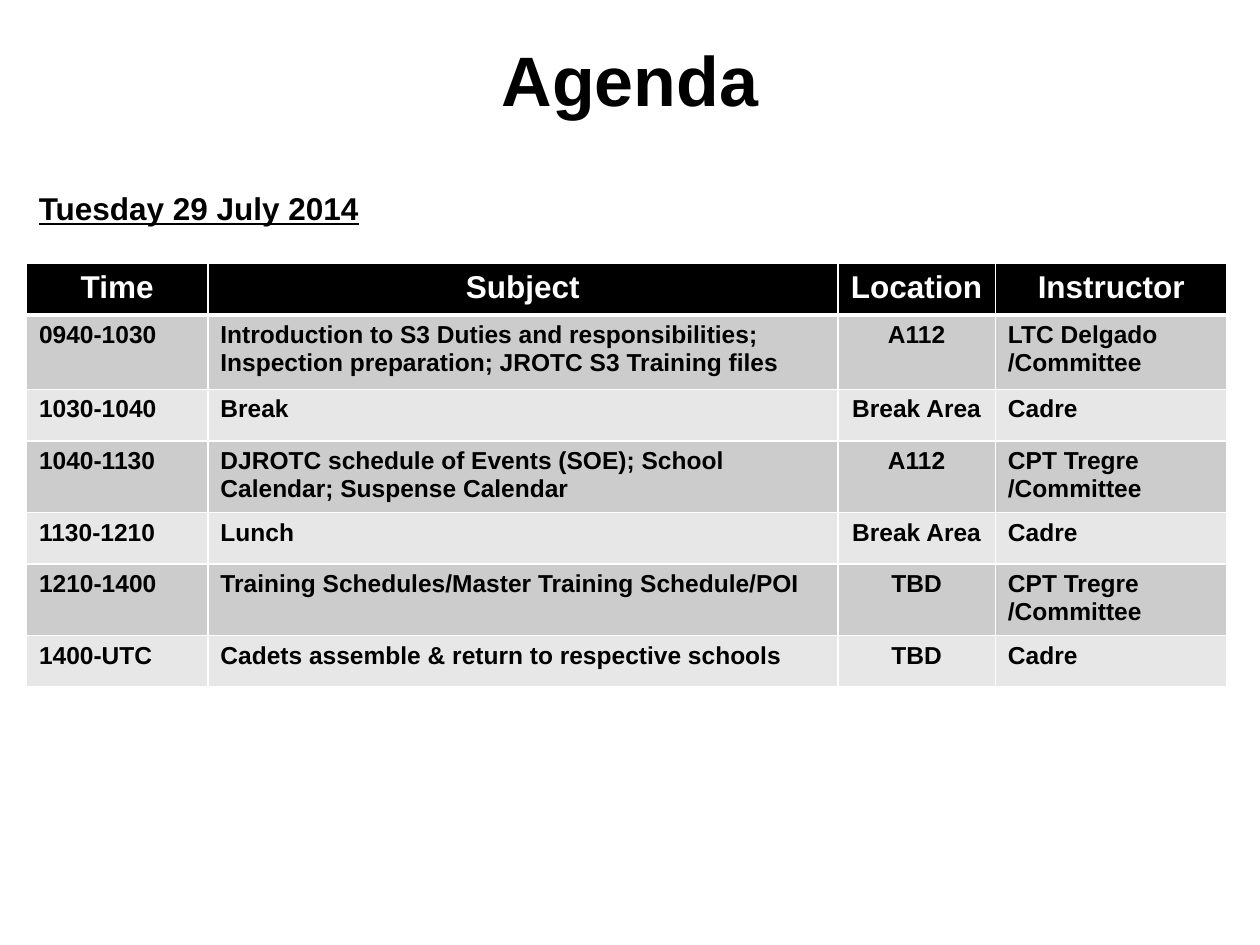
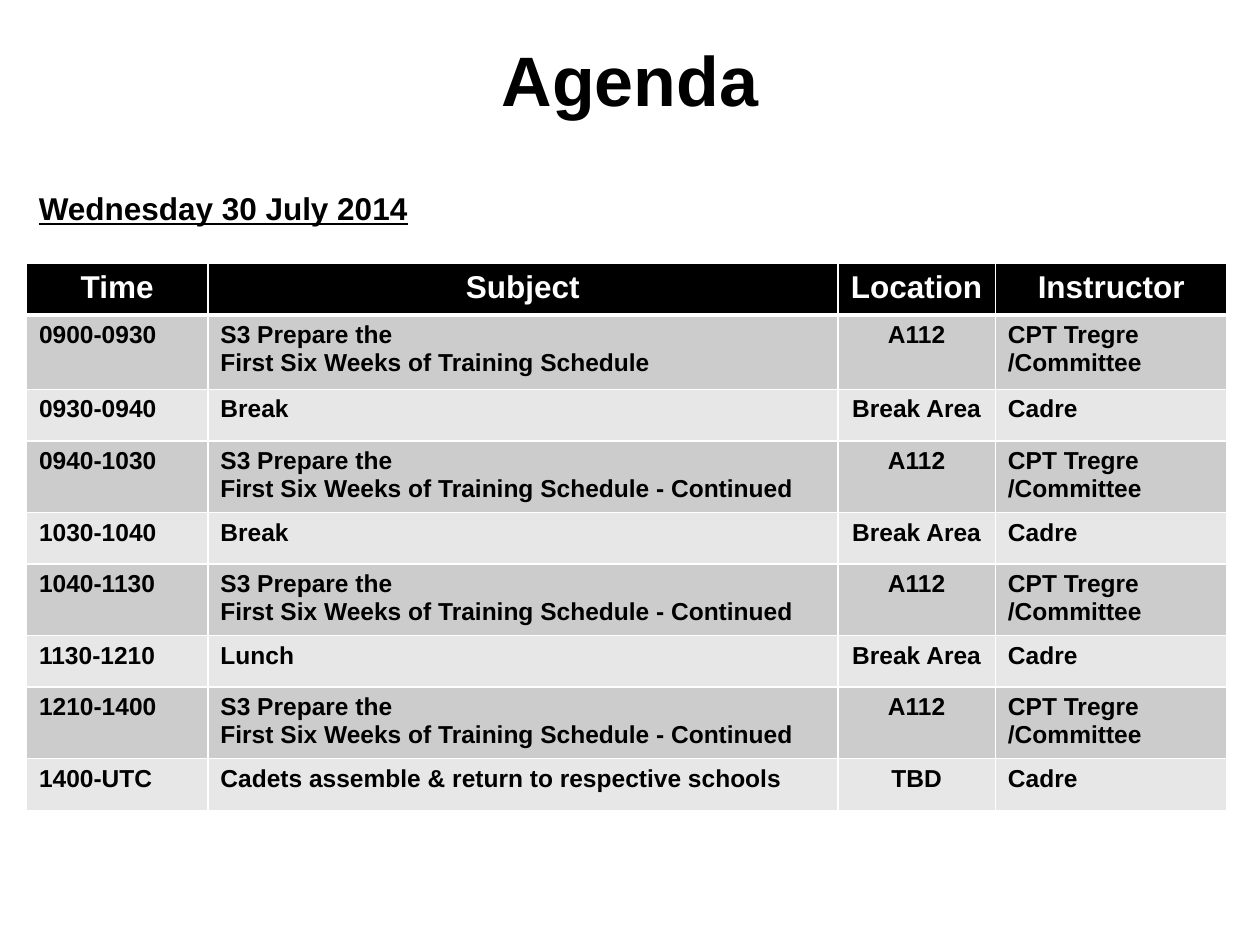
from dataclasses import dataclass

from lxml.etree import SubElement
from pptx import Presentation
from pptx.dml.color import RGBColor
from pptx.enum.text import MSO_ANCHOR, PP_ALIGN
from pptx.oxml.ns import qn
from pptx.util import Inches, Pt

COMMITTEE = "CPT Tregre\n/Committee"
WEEKS = "S3 Prepare the\nFirst Six Weeks of Training Schedule"
CONTINUED = WEEKS + " - Continued"
GO_HOME = ("1400-UTC", "Cadets assemble & return to respective schools", "TBD", "Cadre")


def pause(time, subject="Break"):
    return time, subject, "Break Area", "Cadre"


TITLE = "Agenda"
HEADER = ("Time", "Subject", "Location", "Instructor")
DAYS = [
    ("Tuesday 29 July 2014", 2.76, [
        ("0940-1030",
         "Introduction to S3 Duties and responsibilities; "
         "Inspection preparation; JROTC S3 Training files",
         "A112", "LTC Delgado\n/Committee"),
        pause("1030-1040"),
        ("1040-1130",
         "DJROTC schedule of Events (SOE); School Calendar; Suspense Calendar",
         "A112", COMMITTEE),
        pause("1130-1210", "Lunch"),
        ("1210-1400", "Training Schedules/Master Training Schedule/POI", "TBD", COMMITTEE),
        GO_HOME,
    ]),
    ("Wednesday 30 July 2014", 3.16, [
        ("0900-0930", WEEKS, "A112", COMMITTEE),
        pause("0930-0940"),
        ("0940-1030", CONTINUED, "A112", COMMITTEE),
        pause("1030-1040"),
        ("1040-1130", CONTINUED, "A112", COMMITTEE),
        pause("1130-1210", "Lunch"),
        ("1210-1400", CONTINUED, "A112", COMMITTEE),
        GO_HOME,
    ]),
]


@dataclass(frozen=True)
class Theme:
    font: str = "Arial"
    ink: str = "000000"
    paper: str = "FFFFFF"
    bands: tuple = ("CCCCCC", "E7E7E7")
    title: int = 40
    heading: int = 18
    body: int = 14
    rule: int = 1
    header_rule: int = 3


T = Theme()
SLIDE_W, SLIDE_H = 10, 7.5
LEFT, DATE_TOP, TABLE_TOP = 0.21, 1.45, 2.09
TITLE_W, TITLE_H = 0.9 * SLIDE_W, SLIDE_H / 6
COLUMNS = (1.44, 5, 1.25, 1.84)
ROW_H, FIRST_ROW_H = 0.41, 0.59
CENTRED_COLUMN = HEADER.index("Location")


def write(tf, text, size=T.body, color=T.ink, align=PP_ALIGN.LEFT, underline=None):
    for i, line in enumerate(text.split("\n")):
        p = tf.add_paragraph() if i else tf.paragraphs[0]
        p.alignment = align
        r = p.add_run()
        r.text = line
        f = r.font
        f.name, f.size, f.bold, f.underline = T.font, Pt(size), True, underline
        f.color.rgb = RGBColor.from_string(color)


def add_text(s, text, box, wrap=True, anchor=MSO_ANCHOR.TOP, **fmt):
    tf = s.shapes.add_textbox(*map(Inches, box)).text_frame
    tf.word_wrap = wrap
    tf.vertical_anchor = anchor
    write(tf, text, **fmt)


def add_borders(cell, bottom):
    tcPr = cell._tc.get_or_add_tcPr()
    widths = {"a:lnL": T.rule, "a:lnR": T.rule, "a:lnT": T.rule, "a:lnB": bottom}
    for i, (tag, width) in enumerate(widths.items()):
        ln = SubElement(tcPr, qn(tag), w=str(Pt(width)))
        fill = SubElement(ln, qn("a:solidFill"))
        SubElement(fill, qn("a:srgbClr"), val=T.paper)
        tcPr.insert(i, ln)  # borders come before the cell's fill


def add_schedule(s, entries):
    rows = [HEADER, *entries]
    heights = [ROW_H, FIRST_ROW_H] + [ROW_H] * (len(rows) - 2)
    box = LEFT, TABLE_TOP, sum(COLUMNS), sum(heights)
    table = s.shapes.add_table(len(rows), len(COLUMNS), *map(Inches, box)).table
    for column, width in zip(table.columns, COLUMNS):
        column.width = Inches(width)
    for i, (row, height, texts) in enumerate(zip(table.rows, heights, rows)):
        row.height = Inches(height)
        is_header = i == 0
        for j, (cell, text) in enumerate(zip(row.cells, texts)):
            centred = is_header or j == CENTRED_COLUMN
            write(cell.text_frame, text,
                  size=T.heading if is_header else T.body,
                  color=T.paper if is_header else T.ink,
                  align=PP_ALIGN.CENTER if centred else PP_ALIGN.LEFT)
            cell.fill.solid()
            band = T.ink if is_header else T.bands[(i - 1) % len(T.bands)]
            cell.fill.fore_color.rgb = RGBColor.from_string(band)
            add_borders(cell, T.header_rule if is_header else T.rule)


def add_day(prs, date, date_w, entries):
    s = prs.slides.add_slide(prs.slide_layouts[6])
    add_text(s, TITLE, ((SLIDE_W - TITLE_W) / 2, 0, TITLE_W, TITLE_H),
             anchor=MSO_ANCHOR.MIDDLE, size=T.title, align=PP_ALIGN.CENTER)
    add_schedule(s, entries)
    add_text(s, date, (LEFT, DATE_TOP, date_w, 0.4), wrap=False,
             size=T.heading, underline=True)


def main():
    prs = Presentation()
    prs.slide_width, prs.slide_height = Inches(SLIDE_W), Inches(SLIDE_H)
    for day in DAYS:
        add_day(prs, *day)
    prs.save("out.pptx")


if __name__ == "__main__":
    main()
